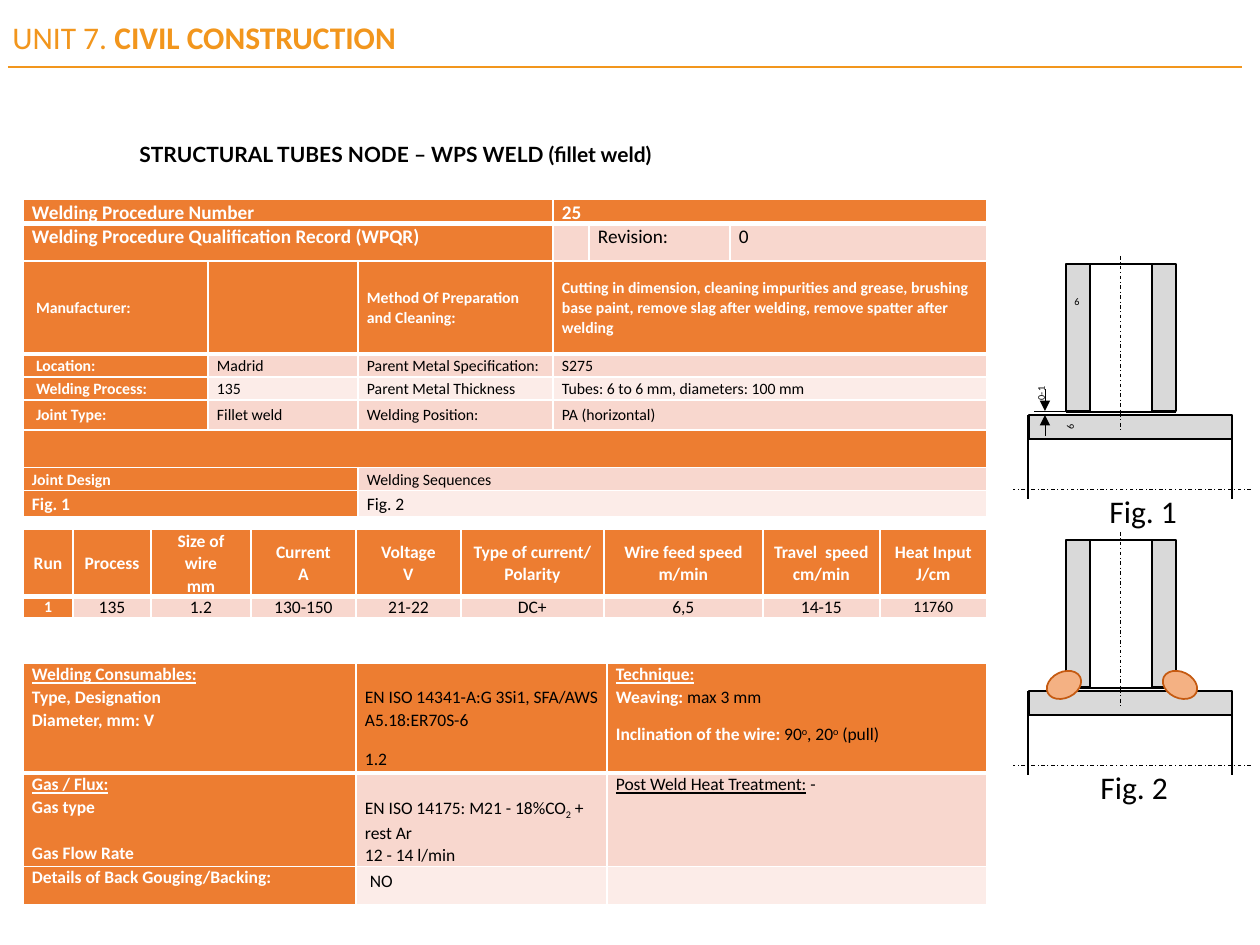
from dataclasses import dataclass

from lxml.etree import SubElement
from pptx import Presentation
from pptx.dml.color import RGBColor
from pptx.enum.dml import MSO_LINE_DASH_STYLE as Dash
from pptx.enum.shapes import MSO_CONNECTOR, MSO_SHAPE as Shape
from pptx.enum.text import MSO_ANCHOR as Anchor, PP_ALIGN as Align
from pptx.oxml import parse_xml
from pptx.oxml.ns import nsdecls, qn
from pptx.util import Emu, Pt

PX = 914400 / 126
BLACK = RGBColor(0x00, 0x00, 0x00)
WHITE = RGBColor(0xFF, 0xFF, 0xFF)
GOLD = RGBColor(0xF2, 0x96, 0x1D)
ORANGE = RGBColor(0xED, 0x7D, 0x31)
BANDS = [RGBColor(0xFC, 0xEC, 0xE8), RGBColor(0xF8, 0xD7, 0xCE)]
STEEL = RGBColor(0xD9, 0xD9, 0xD9)
BEAD = RGBColor(0xF4, 0xB1, 0x83)
BEAD_EDGE = RGBColor(0xC5, 0x5A, 0x11)


@dataclass
class Span:
    text: str
    plain: bool = False
    underline: bool = False
    baseline: int = 0


@dataclass
class Para:
    spans: list
    gap: int = 0


@dataclass
class Entry:
    paras: list
    left: int = 0
    top: int = 0
    size: int = 0


def px(length):
    return Emu(round(length * PX))


def style(font, size, color, bold=False, name="Calibri", baseline=0):
    font.name, font.size, font.bold = name, Pt(size), bold
    font.color.rgb = color
    if baseline:
        font._element.set("baseline", str(baseline * 1000))


def add_label(page, spans, left, top, width, height, size, color=BLACK,
              wrap=True, turn=0, name="Calibri", baseline=0):
    """Text box on one line; spans are (text, bold) pairs."""
    box = page.shapes.add_textbox(px(left), px(top), px(width), px(height))
    box.rotation = turn
    box.text_frame.word_wrap = wrap
    for text, bold in spans:
        run = box.text_frame.paragraphs[0].add_run()
        run.text = text
        style(run.font, size, color, bold, name, baseline)
    return box


def add_line(page, x1, y1, x2, y2, weight, color=BLACK, dash=None, arrow=False):
    line = page.shapes.add_connector(MSO_CONNECTOR.STRAIGHT, px(x1), px(y1), px(x2), px(y2))
    line.line.color.rgb, line.line.width = color, Pt(weight)
    if dash:
        line.line.dash_style = dash
    if arrow:
        SubElement(line.line._get_or_add_ln(), qn("a:tailEnd"), type="triangle")
    SubElement(line._element.spPr, qn("a:effectLst"))


def add_solid(page, kind, left, top, width, height, fill=STEEL, edge=BLACK, turn=0):
    solid = page.shapes.add_shape(kind, px(left), px(top), px(width), px(height))
    solid.shadow.inherit = False
    solid.fill.solid()
    solid.fill.fore_color.rgb = fill
    solid.line.color.rgb, solid.line.width = edge, Pt(1)
    solid.rotation = turn


def set_borders(cell, bottom):
    for index, side in enumerate(["L", "R", "T", "B"]):
        weight = Pt(bottom if side == "B" else 1)
        cell._tc.get_or_add_tcPr().insert(index, parse_xml(
            f'<a:ln{side} {nsdecls("a")} w="{weight}"><a:solidFill>'
            f'<a:srgbClr val="{WHITE}"/></a:solidFill></a:ln{side}>'))


def fill_paragraph(paragraph, para, size, color, bold, align):
    paragraph.line_spacing = 1.07
    paragraph.alignment = align
    if para.gap:
        paragraph.space_before = Pt(para.gap)
    for span in para.spans:
        for index, piece in enumerate(span.text.split("\v")):
            if index:
                paragraph.add_line_break()
            run = paragraph.add_run()
            run.text = piece
            style(run.font, size, BLACK if span.plain else color,
                  bold and not span.plain, baseline=span.baseline)
            run.font.underline = span.underline
    SubElement(paragraph._p, qn("a:endParaRPr"), sz=str(size * 100))


def fill_cell(cell, entry, size, row, col, anchor, align):
    """Header row and first column are orange, the other rows alternate."""
    if isinstance(entry, str):
        entry = Entry([Para([Span(text)]) for text in entry.split("\n")])
    accent = row == 0 or col == 0
    cell.fill.solid()
    cell.fill.fore_color.rgb = ORANGE if accent else BANDS[row % 2]
    set_borders(cell, 3 if row == 0 else 1)
    cell.vertical_anchor = anchor
    cell.margin_left, cell.margin_right = px(9 + entry.left), px(9)
    cell.margin_top, cell.margin_bottom = px(entry.top), 0
    for index, para in enumerate(entry.paras):
        frame = cell.text_frame
        paragraph = frame.add_paragraph() if index else frame.paragraphs[0]
        fill_paragraph(paragraph, para, entry.size or size,
                       WHITE if accent else BLACK, accent, align)


def add_grid(page, top, widths, heights, rows, size, anchor=Anchor.TOP, align=Align.LEFT):
    """A None entry extends the cell on its left."""
    grid = page.shapes.add_table(len(rows), len(widths), px(23), px(top),
                                 px(sum(widths)), px(sum(heights))).table
    grid.first_row = grid.horz_banding = False
    for column, width in zip(grid.columns, widths):
        column.width = px(width)
    for row, (height, entries) in enumerate(zip(heights, rows)):
        grid.rows[row].height = px(height)
        for col, entry in enumerate(entries):
            if entry is None:
                continue
            end = col
            while end + 1 < len(entries) and entries[end + 1] is None:
                end += 1
            if end > col:
                grid.cell(row, col).merge(grid.cell(row, end))
            fill_cell(grid.cell(row, col), entry, size, row, col, anchor, align)
    return grid


def single_space(grid, row):
    for cell in grid.rows[row].cells:
        cell.text_frame.paragraphs[0].line_spacing = 1.0


def inset(text):
    return Entry([Para([Span(text)])], left=4)


def sized(text, size):
    return Entry([Para([Span(text)])], size=size)


def add_procedure_tables(page):
    add_grid(page, 199, [530, 36, 141, 257], [24, 24], [
        ["Welding Procedure Number", "25", None, None],
        ["Welding Procedure Qualification Record (WPQR)", "", "Revision:", "0"],
    ], 11)
    add_grid(page, 261, [185, 150, 195, 434], [93, 23, 23, 30, 26, 23, 26], [
        [inset("Manufacturer:"), "", "Method Of Preparation\vand Cleaning:",
         "Cutting in dimension, cleaning impurities and grease, brushing base paint, "
         "remove slag after welding, remove spatter after welding"],
        [inset("Location:"), "Madrid", "Parent Metal Specification:", "S275"],
        [inset("Welding Process:"), "135", "Parent Metal Thickness",
         "Tubes: 6 to 6 mm, diameters: 100 mm"],
        [inset("Joint Type:"), "Fillet weld", "Welding Position:", "PA (horizontal)"],
        ["", None, None, None],
        ["Joint Design", None, "Welding Sequences", None],
        [sized("Fig. 1", 10), None, sized("Fig. 2", 10), None],
    ], 9, Anchor.MIDDLE)


def add_run_table(page):
    grid = add_grid(page, 529, [50, 78, 100, 105, 105, 143, 159, 117, 107], [67, 20], [
        ["Run", "Process", "Size of wire\vmm", "Current\vA", "Voltage\vV",
         "Type of current/\nPolarity", "Wire feed speed\nm/min",
         "Travel  speed\ncm/min", "Heat Input\nJ/cm"],
        [sized("1", 9), "135", "1.2", "130-150", "21-22", "DC+", "6,5", "14-15",
         sized("11760", 9)],
    ], 10, Anchor.MIDDLE, Align.CENTER)
    single_space(grid, 1)


def add_consumables_table(page):
    consumables = Entry([
        Para([Span("Welding Consumables:", underline=True), Span("\vType, Designation")]),
        Para([Span("Diameter, mm: V")])])
    wire = Entry([
        Para([Span("EN ISO 14341-A:G 3Si1, SFA/AWS A5.18:ER70S-6", plain=True)]),
        Para([Span("1.2", plain=True)], gap=9)], top=23)
    technique = Entry([
        Para([Span("Technique:", underline=True)]),
        Para([Span("Weaving: "), Span("max 3 mm", plain=True)]),
        Para([Span("Inclination of the wire: "), Span("90", plain=True),
              Span("o", plain=True, baseline=30), Span(", 20", plain=True),
              Span("o", plain=True, baseline=30), Span(" (pull)", plain=True)], gap=8)])
    gas = Entry([
        Para([Span("Gas / Flux:", underline=True), Span("\vGas type")]),
        Para([Span("Gas Flow Rate")], gap=13)])
    mixture = Entry([
        Para([Span("EN ISO 14175: M21 - 18%CO"), Span("2", baseline=-25), Span(" + rest Ar")]),
        Para([Span("12 - 14 l/min")])], top=23)
    treatment = Entry([Para([Span("Post Weld Heat Treatment:", underline=True), Span(" -")])])
    grid = add_grid(page, 663, [333, 251, 380], [110, 93, 35], [
        [consumables, wire, technique],
        [gas, mixture, treatment],
        ["Details of Back Gouging/Backing:", Entry([Para([Span("NO")])], left=5, top=4), ""],
    ], 10)
    single_space(grid, 2)


def add_joint(page, top):
    """Section of a tube standing on a second tube."""
    for left in (1066, 1152):
        add_solid(page, Shape.RECTANGLE, left, top, 24, 147)
    add_solid(page, Shape.RECTANGLE, 1029, top + 151, 203, 24)
    for y in (top, top + 148):
        add_line(page, 1066, y, 1176, y, 1)
    add_line(page, 1120, top - 8, 1120, top + 166, 0.5, dash=Dash.DASH_DOT)
    add_line(page, 1251, top + 225, 1013, top + 225, 0.5, dash=Dash.DASH_DOT)
    for x in (1028, 1232):
        add_line(page, x, top + 151, x, top + 235, 1)


def add_dimensions(page):
    add_line(page, 1045, 436, 1045, 415, 0.25, arrow=True)
    add_line(page, 1045, 389, 1045, 411, 0.25, arrow=True)
    add_line(page, 1082, 411, 1034, 411, 0.25)
    for text, left, top, width, turn in [("0-1", 1018, 378, 43, 270),
                                         ("6", 1062, 287, 35, 0),
                                         ("6", 1051, 411, 35, 270)]:
        add_label(page, [(text, False)], left, top, width, 26, 10, turn=turn, baseline=30)


def main():
    deck = Presentation()
    deck.slide_width, deck.slide_height = px(1260), px(945)
    page = deck.slides.add_slide(deck.slide_layouts[6])

    # Heading
    add_line(page, 8, 67, 1242, 67, 1.5, GOLD)
    title = add_label(page, [("UNIT 7. ", False), ("CIVIL CONSTRUCTION", True)],
                      0, 9, 505, 55, 18, GOLD)
    title.text_frame.vertical_anchor = Anchor.MIDDLE
    add_label(page, [("STRUCTURAL TUBES NODE – WPS WELD (fillet weld)", True)],
              127, 135, 887, 38, 12, name="Lato")

    # Tables
    add_procedure_tables(page)
    add_run_table(page)
    add_consumables_table(page)

    # Figures
    add_label(page, [("Fig. 1", False)], 1097, 486, 93, 50, 18, wrap=False)
    add_label(page, [("Fig. 2", False)], 1088, 762, 93, 50, 18, wrap=False)
    add_joint(page, 264)
    add_dimensions(page)
    add_joint(page, 540)
    for left, turn in ((1162, 25.9), (1046, 334.1)):
        add_solid(page, Shape.OVAL, left, 672, 36, 26, BEAD, BEAD_EDGE, turn)

    deck.save("out.pptx")


if __name__ == "__main__":
    main()
